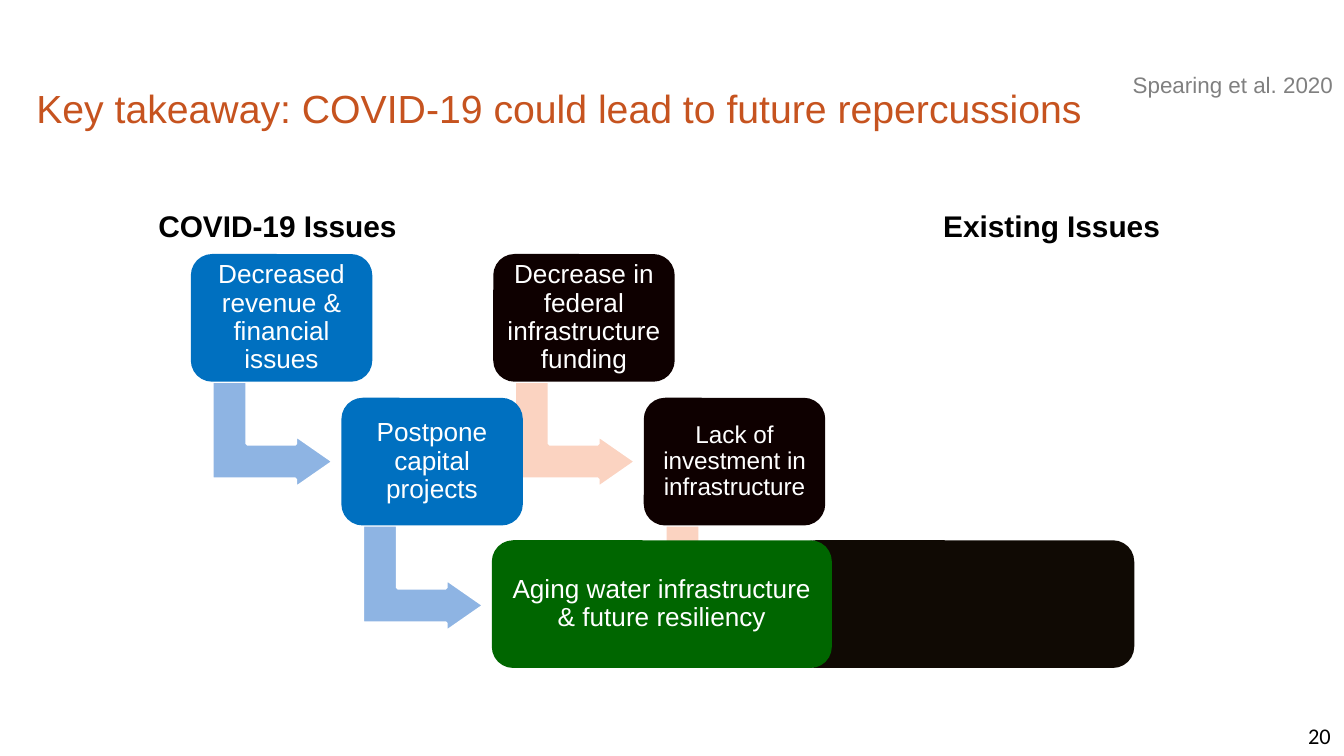
from pptx import Presentation
from pptx.dml.color import RGBColor
from pptx.enum.shapes import MSO_SHAPE
from pptx.enum.text import MSO_ANCHOR, PP_ALIGN
from pptx.util import Inches, Pt

ROUNDED = MSO_SHAPE.ROUNDED_RECTANGLE
BENT_ARROW = MSO_SHAPE.BENT_UP_ARROW
TOP, MIDDLE = MSO_ANCHOR.TOP, MSO_ANCHOR.MIDDLE
LEFT, CENTER, RIGHT = PP_ALIGN.LEFT, PP_ALIGN.CENTER, PP_ALIGN.RIGHT

TITLE_ONLY = 5
STEP_X, STEP_Y = 1.12, 1.07
CARD_TOP, CARD_WIDTH, CARD_HEIGHT = 1.89, 1.35, 0.95
WIDE_TOP, WIDE_WIDTH = 4.02, 2.53


def color(value):
    return RGBColor.from_string(value)


def write(frame, text, size=14, font="Arial", fill="FFFFFF", bold=False,
          align=LEFT, anchor=TOP, wrap=True, spacing=None, inset=None):
    frame.word_wrap = wrap
    frame.vertical_anchor = anchor
    if inset is not None:
        frame.margin_left = frame.margin_right = Inches(inset)
        frame.margin_top = frame.margin_bottom = Inches(inset)
    para = frame.paragraphs[0]
    para.alignment = align
    para.line_spacing = spacing
    span = para.add_run()
    span.text = text
    span.font.size = Pt(size)
    span.font.name = font
    span.font.bold = bold
    span.font.color.rgb = color(fill)


def add_label(page, text, left, top, width, height, **style):
    box = page.shapes.add_textbox(Inches(left), Inches(top), Inches(width), Inches(height))
    write(box.text_frame, text, **style)


def add_block(page, kind, left, top, width, height, fill):
    block = page.shapes.add_shape(kind, Inches(left), Inches(top), Inches(width), Inches(height))
    block.shadow.inherit = False
    block.fill.solid()
    block.fill.fore_color.rgb = color(fill)
    block.line.fill.background()
    return block


def add_card(page, left, top, width, fill, text=None, size=14):
    card = add_block(page, ROUNDED, left, top, width, CARD_HEIGHT, fill)
    card.adjustments[0] = 0.167
    if text:
        write(card.text_frame, text, size=size, align=CENTER, anchor=MIDDLE,
              spacing=0.9, inset=0.05)


def add_arrow(page, left, top, fill):
    arrow = add_block(page, BENT_ARROW, left, top, 0.8, 0.91, fill)
    arrow.line.color.rgb = color("FFFFFF")
    arrow.line.width = Pt(2)
    arrow.rotation = 90
    for index, value in enumerate((0.33, 0.25, 0.36)):
        arrow.adjustments[index] = value


def add_stairs(page, left, steps, card_fill, arrow_fill):
    for index, (text, size) in enumerate(steps):
        x = left + index * STEP_X
        y = CARD_TOP + index * STEP_Y
        add_arrow(page, x + 0.21, y + 0.89, arrow_fill)
        add_card(page, x, y, CARD_WIDTH, card_fill, text, size)


def add_title(page, text):
    title = page.shapes.title
    title.left, title.top = Inches(0.17), Inches(0.56)
    title.width, title.height = Inches(9.75), Inches(0.49)
    write(title.text_frame, text, size=21, fill="C6531F", anchor=MIDDLE)


def main():
    deck = Presentation()
    deck.slide_width = Inches(10)
    deck.slide_height = Inches(10 * 9 / 16)
    page = deck.slides.add_slide(deck.slide_layouts[TITLE_ONLY])
    add_title(page, "Key takeaway: COVID-19 could lead to future repercussions")

    existing_steps = [("Decrease in federal infrastructure funding", 14),
                      ("Lack of investment in infrastructure", 13)]
    add_stairs(page, 3.67, existing_steps, "0E0000", "FBD3C1")
    add_card(page, 5.91, WIDE_TOP, WIDE_WIDTH, "100A04")

    covid_steps = [("Decreased revenue & financial issues", 14),
                   ("Postpone capital projects", 14)]
    add_stairs(page, 1.42, covid_steps, "0070C0", "8EB4E3")
    add_card(page, 3.66, WIDE_TOP, WIDE_WIDTH, "006600",
             "Aging water infrastructure & future resiliency")

    for text, left, width in (("COVID-19 Issues", 1.08, 2), ("Existing Issues", 6.92, 1.84)):
        add_label(page, text, left, 1.5, width, 0.37, size=16, fill="000000",
                  bold=True, wrap=False)
    add_label(page, "Spearing et al. 2020", 8.33, 0.48, 1.7, 0.3, size=12,
              fill="808080", wrap=False)
    add_label(page, "20", 7.75, 5.32, 2.25, 0.3, size=12, font="Calibri",
              fill="000000", align=RIGHT, anchor=MIDDLE)
    deck.save("out.pptx")


if __name__ == "__main__":
    main()
